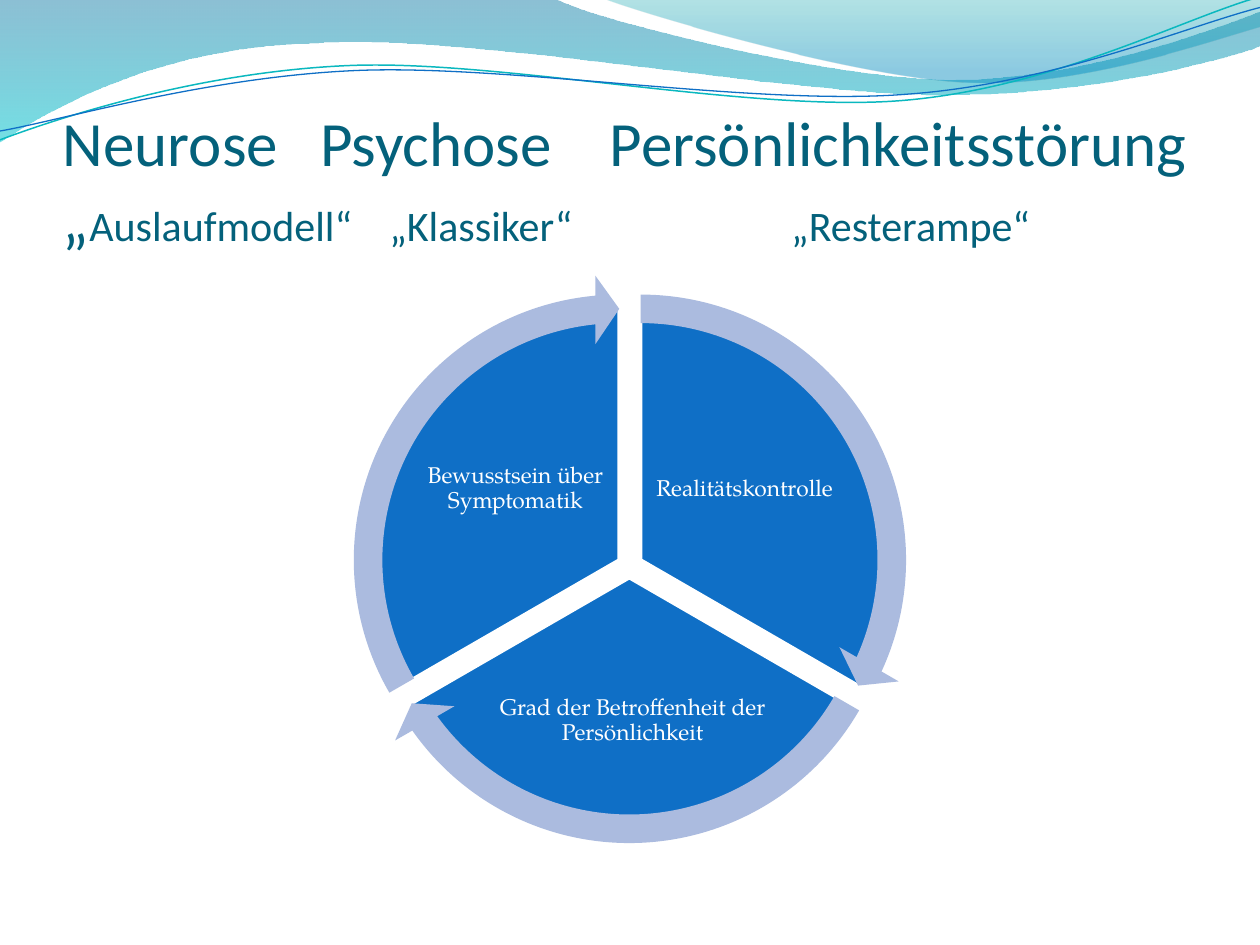
from dataclasses import dataclass, field
from math import cos, radians, sin

from lxml.etree import SubElement
from pptx import Presentation
from pptx.dml.color import RGBColor
from pptx.enum.shapes import MSO_SHAPE as Preset
from pptx.enum.text import MSO_ANCHOR as Anchor, PP_ALIGN as Align
from pptx.oxml.ns import qn
from pptx.util import Inches, Pt

COLORS = {
    "title": "04617B", "slice": "0F6FC6", "arrow": "ABBBDF", "white": "FFFFFF",
    "sea": "0074A1", "cyan": "00C6CF", "teal": "00A1A9", "sky": "008BBF",
    "teal line": "0AB8BF", "blue line": "0F6FC6",
}
BANDS = [
    ([(0, 0), (4.4, -0.01),
      ((4.76, 0.17), (6.64, 0.63), (7.58, 0.63)), ((8.53, 0.63), (9.58, 0.26), (10, 0.09)),
      (10.01, 0.36),
      ((9.83, 0.44), (8.7, 0.76), (7.46, 0.75)), ((6.22, 0.75), (3.82, 0.28), (2.57, 0.34)),
      ((1.29, 0.36), (0.46, 0.83), (-0.01, 1.13)), (0, 0)],
     [(0, "sea", 45), (1, "cyan", 55)]),
    ([(4.79, -0.01),
      ((5.09, 0.11), (6.82, 0.62), (7.69, 0.65)), ((8.56, 0.69), (9.61, 0.32), (10, 0.21)),
      (10, 0), (4.79, -0.01)],
     [(0, "teal", 30), (0.8, "sky", 45)]),
]
WAVES = [
    ([(0, 1.11), ((0.48, 0.93), (1.58, 0.57), (2.77, 0.52)),
      ((3.95, 0.47), (5.93, 0.89), (7.13, 0.8)), ((8.33, 0.71), (9.38, 0.15), (9.98, -0.02))],
     (4.99, 0.58), "teal line", 0.85),
    ([(0, 1.04), ((0.47, 0.96), (1.64, 0.61), (2.83, 0.56)),
      ((4.03, 0.51), (5.97, 0.84), (7.17, 0.75)), ((8.36, 0.67), (9.41, 0.21), (10, 0.06))],
     (5, 0.59), "blue line", 0.75),
]
WAVE_TILT = -2.7
TITLE = [
    [("Neurose\tPsychose\tPersönlichkeitsstörung", 36)],
    [("„", 36), ("Auslaufmodell“\t„Klassiker“\t\t„Resterampe“", 24)],
]
TITLE_TABS = (2.04, 2.59, 4.34, 5.78)
SLICES = [
    ("Realitätskontrolle", (3.07, 2.43), (162, 18), (5.19, 3.28, 1.44, 1.2)),
    ("Grad der Betroffenheit der Persönlichkeit", (2.98, 2.57), (18, 90), (3.94, 5.19, 2.16, 1.06)),
    ("Bewusstsein über Symptomatik", (2.9, 2.43), (90, 162), (3.37, 3.28, 1.44, 1.2)),
]
ARROW_ANGLES = [(14.73, 161.99), (86.72, 18), (158.73, 90)]
PIE_SIZE, ARROW_SIZE = 4.03, 4.53


def is_curve(segment):
    return isinstance(segment[0], tuple)


def turn(point, center, degrees):
    angle = radians(degrees)
    x, y = point[0] - center[0], point[1] - center[1]
    return (center[0] + x * cos(angle) - y * sin(angle), center[1] + x * sin(angle) + y * cos(angle))


@dataclass
class Painter:
    """Draws styled elements on the current page."""

    page: object
    heading_font: str = "Calibri"
    body_font: str = "TeX Gyre Pagella"
    colors: dict = field(default_factory=lambda: COLORS)

    def color(self, name):
        return RGBColor.from_string(self.colors[name])

    def outline(self, segments, close):
        points = []
        for segment in segments:
            points.extend(segment if is_curve(segment) else [segment])
        points = [(Inches(x), Inches(y)) for x, y in points]
        builder = self.page.shapes.build_freeform(*points[0], scale=1.0)
        builder.add_line_segments(points[1:], close=close)
        shape = builder.convert_to_shape()
        shape.shadow.inherit = False
        lines = iter(list(shape.element.spPr.iter(qn("a:lnTo"))))
        for segment in segments[1:]:
            line = next(lines)
            if is_curve(segment):
                line.tag = qn("a:cubicBezTo")
                for handle in (next(lines), next(lines)):
                    line.append(handle[0])
                    handle.getparent().remove(handle)
        return shape

    def band(self, segments, stops):
        shape = self.outline(segments, True)
        shape.line.fill.background()
        shape.fill.gradient()
        shape.fill.gradient_angle = 270
        for stop, (position, name, _) in zip(shape.fill.gradient_stops, stops):
            stop.position = position
            stop.color.rgb = self.color(name)
        tints = shape.element.spPr.find(qn("a:gradFill")).iter(qn("a:srgbClr"))
        for tint, (_, _, opacity) in zip(tints, stops):
            SubElement(tint, qn("a:alpha"), val=str(opacity * 1000))

    def wave(self, segments, center, name, width):
        level = [
            tuple(turn(point, center, -WAVE_TILT) for point in segment) if is_curve(segment)
            else turn(segment, center, -WAVE_TILT)
            for segment in segments
        ]
        shape = self.outline(level, False)
        shape.rotation = WAVE_TILT
        shape.fill.background()
        shape.line.color.rgb = self.color(name)
        shape.line.width = Pt(width)

    def preset(self, kind, left, top, size, adjustments, fill, border=None):
        shape = self.page.shapes.add_shape(kind, Inches(left), Inches(top), Inches(size), Inches(size))
        shape.shadow.inherit = False
        for index, value in enumerate(adjustments):
            shape.adjustments[index] = value
        shape.fill.solid()
        shape.fill.fore_color.rgb = self.color(fill)
        if border:
            shape.line.color.rgb = self.color(border)
            shape.line.width = Pt(2)
        else:
            shape.line.fill.background()

    def frame(self, box, anchor, insets):
        frame = self.page.shapes.add_textbox(*map(Inches, box)).text_frame
        frame.word_wrap = True
        frame.vertical_anchor = anchor
        frame.margin_left, frame.margin_top, frame.margin_right, frame.margin_bottom = map(Inches, insets)
        return frame

    def span(self, para, text, size, font, color):
        span = para.add_run()
        span.text = text
        span.font.size = Pt(size)
        span.font.name = font
        span.font.color.rgb = self.color(color)

    def title(self, box, lines, tabs):
        para = self.frame(box, Anchor.BOTTOM, (0, 0.05, 0, 0)).paragraphs[0]
        for index, spans in enumerate(lines):
            if index:
                para.add_line_break()
            for text, size in spans:
                self.span(para, text, size, self.heading_font, "title")
        tab_list = SubElement(para._p.get_or_add_pPr(), qn("a:tabLst"))
        for tab in tabs:
            SubElement(tab_list, qn("a:tab"), pos=str(Inches(tab)), algn="l")

    def label(self, box, text):
        para = self.frame(box, Anchor.MIDDLE, (0.02,) * 4).paragraphs[0]
        para.alignment = Align.CENTER
        para.line_spacing = 0.9
        self.span(para, text, 13, self.body_font, "white")


def main():
    deck = Presentation()
    deck.slide_width, deck.slide_height = Inches(10), Inches(7.5)
    painter = Painter(deck.slides.add_slide(deck.slide_layouts[6]))
    for band in BANDS:
        painter.band(*band)
    for wave in WAVES:
        painter.wave(*wave)
    painter.title((0.5, 0.77, 9, 1.25), TITLE, TITLE_TABS)
    for text, corner, angles, box in SLICES:
        painter.preset(Preset.PIE, *corner, PIE_SIZE, angles, "slice", "white")
        painter.label(box, text)
    shift = (PIE_SIZE - ARROW_SIZE) / 2
    for (_, (left, top), _, _), (end, start) in zip(SLICES, ARROW_ANGLES):
        adjustments = (0.05, 3.28, end, start, 0.06)
        painter.preset(Preset.CIRCULAR_ARROW, left + shift, top + shift, ARROW_SIZE, adjustments, "arrow")
    deck.save("out.pptx")


if __name__ == "__main__":
    main()
